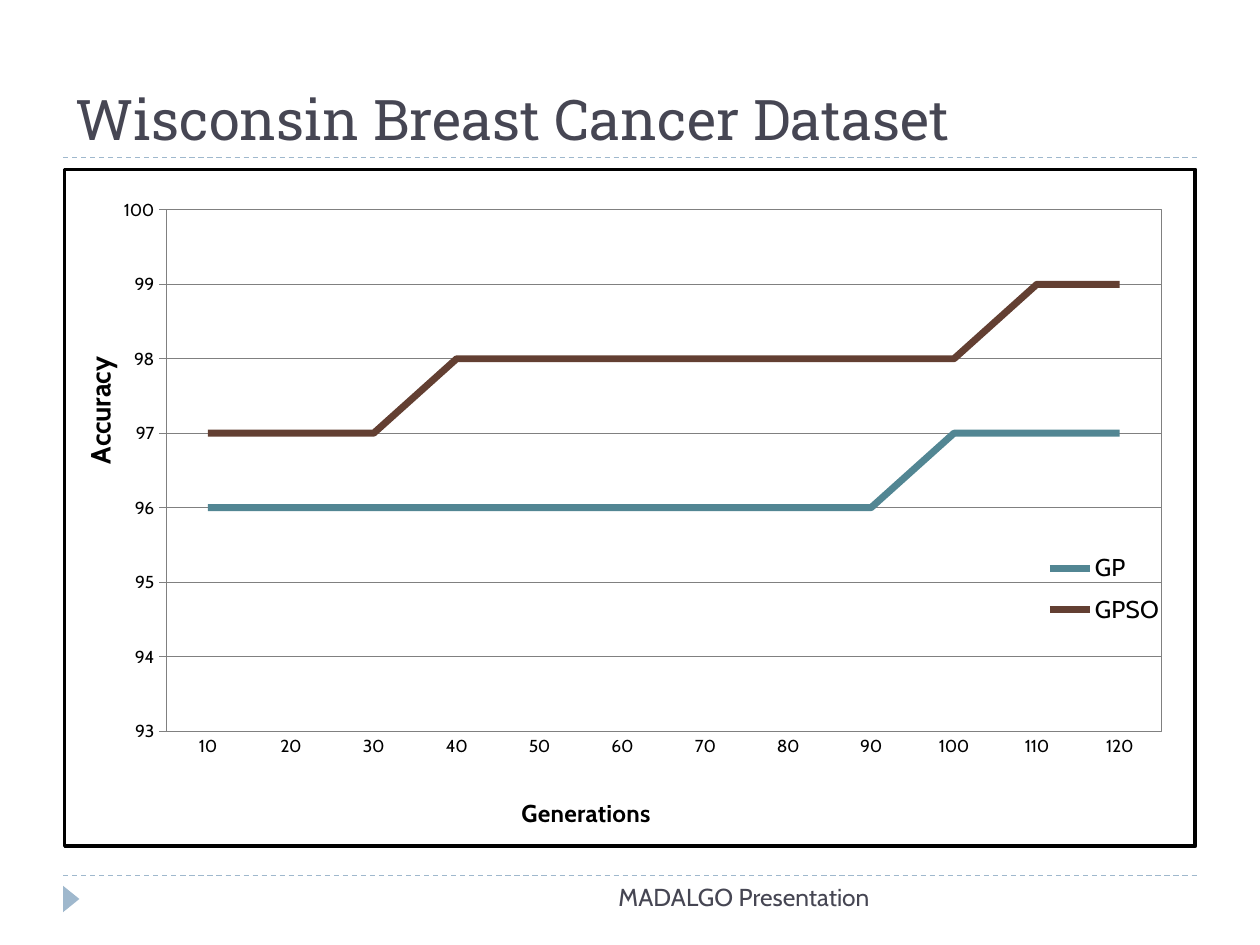
from dataclasses import dataclass
from lxml.etree import SubElement as Sub
from pptx import Presentation as Deck
from pptx.chart.data import CategoryChartData as Data
from pptx.dml.color import RGBColor as RGB
from pptx.enum.chart import XL_CHART_TYPE as Kind, XL_LEGEND_POSITION as Pos, XL_TICK_MARK as Tick
from pptx.enum.dml import MSO_LINE as Dash
from pptx.enum.shapes import MSO_CONNECTOR as Link, MSO_SHAPE as Form
from pptx.enum.text import MSO_ANCHOR as Anchor, PP_ALIGN as Align
from pptx.oxml import parse_xml
from pptx.oxml.ns import nsdecls, qn
from pptx.util import Inches, Pt


@dataclass(frozen=True)
class Theme:
    ink: str = "464653"
    sky: str = "9FB8CD"
    black: str = "000000"
    grid: str = "808080"
    teal: str = "528693"
    brown: str = "633F32"
    head: str = "Roboto Slab"
    body: str = "Cabin"
    title: int = 32
    large: int = 16
    mid: int = 14
    small: int = 10


class Page:
    def __init__(self, slide, theme):
        self.slide, self.theme = slide, theme

    def font(self, font, size, color, face, bold=False):
        font.size, font.name, font.bold = Pt(size), face, bold
        font.color.rgb = RGB.from_string(color)

    def stroke(self, line, color, width):
        line.color.rgb = RGB.from_string(color)
        line.width = Pt(width)

    def rule(self, y):
        left, right, top = Inches(0.5), Inches(9.5), Inches(y)
        line = self.slide.shapes.add_connector(Link.STRAIGHT, left, top, right, top)
        self.stroke(line.line, self.theme.sky, 0.75)
        line.line.dash_style = Dash.DASH
        Sub(line._element.spPr, qn("a:effectLst"))

    def mark(self, *box):
        shape = self.slide.shapes.add_shape(Form.ISOSCELES_TRIANGLE, *map(Inches, box))
        shape.rotation = 90
        shape.shadow.inherit = False
        shape.fill.solid()
        shape.fill.fore_color.rgb = RGB.from_string(self.theme.sky)
        shape.line.fill.background()

    def text(self, words, box, size, face, anchor=Anchor.TOP, align=Align.LEFT):
        frame = self.slide.shapes.add_textbox(*map(Inches, box)).text_frame
        frame.word_wrap = True
        frame.vertical_anchor = anchor
        para = frame.paragraphs[0]
        para.alignment = align
        run = para.add_run()
        run.text = words
        self.font(run.font, size, self.theme.ink, face)

    def place(self, node, index, **spots):
        for old in node.findall(qn("c:layout")):
            node.remove(old)
        layout = parse_xml(f"<c:layout {nsdecls('c')}/>")
        manual = Sub(layout, qn("c:manualLayout"))
        if index == 0:
            Sub(manual, qn("c:layoutTarget"), val="inner")
        for key in ("x", "y"):
            Sub(manual, qn(f"c:{key}Mode"), val="edge")
        for key, value in spots.items():
            Sub(manual, qn(f"c:{key}"), val=str(value))
        node.insert(index, layout)

    def frame(self, color, width, fill):
        return parse_xml(
            f"<c:spPr {nsdecls('c', 'a')}>{fill}<a:ln w='{Pt(width)}'>"
            f"<a:solidFill><a:srgbClr val='{color}'/></a:solidFill></a:ln></c:spPr>")

    def label(self, axis, words, size, x, y, turn=0):
        title = axis.axis_title
        run = title.text_frame.paragraphs[0].add_run()
        run.text = words
        self.font(run.font, size, self.theme.black, self.theme.body, True)
        node = title._element
        node.find(".//" + qn("a:bodyPr")).set("rot", str(turn * 60000))
        self.place(node, 1, x=x, y=y)

    def chart(self, box, cats, rows):
        theme = self.theme
        data = Data(number_format="0")
        data.categories = cats
        for name, _, values in rows:
            data.add_series(name, values)
        chart = self.slide.shapes.add_chart(Kind.LINE, *map(Inches, box), data).chart
        chart.has_title = False
        self.font(chart.font, theme.small, theme.black, theme.body)
        chart.plots[0].vary_by_categories = False
        for line, (_, color, _) in zip(chart.series, rows):
            line.smooth = False
            self.stroke(line.format.line, color, 4)

        across, up = chart.category_axis, chart.value_axis
        for part in (across, up, up.major_gridlines):
            self.stroke(part.format.line, theme.grid, 0.5)
        across.major_tick_mark = Tick.NONE
        up.major_tick_mark = Tick.OUTSIDE
        up.minimum_scale, up.maximum_scale, up.major_unit = 93, 100, 1
        up.tick_labels.number_format = "0"
        up.tick_labels.number_format_is_linked = False
        self.label(across, "Generations", theme.mid, 0.4, 0.92)
        self.label(up, "Accuracy", theme.large, 0.01, 0.27, -90)

        chart.has_legend = True
        key = chart.legend
        key.position = Pos.RIGHT
        key.include_in_layout = False
        self.font(key.font, theme.mid, theme.black, theme.body)
        self.place(key._element, 1, x=0.86, y=0.55, w=0.12, h=0.14)

        root = chart._chartSpace.find(qn("c:chart"))
        plot = root.find(qn("c:plotArea"))
        self.place(plot, 0, x=0.09, y=0.06, w=0.88, h=0.77)
        plot.append(self.frame(theme.grid, 0.5, "<a:noFill/>"))
        white = "<a:solidFill><a:srgbClr val='FFFFFF'/></a:solidFill>"
        root.addnext(self.frame(theme.black, 2, white))


def main():
    deck = Deck()
    deck.slide_width, deck.slide_height = Inches(10), Inches(7.5)
    theme = Theme()
    page = Page(deck.slides.add_slide(deck.slide_layouts[6]), theme)
    for y in (6.95, 1.25):
        page.rule(y)
    page.mark(0.46, 7.07, 0.21, 0.13)
    page.text("Wisconsin Breast Cancer Dataset", (0.5, 0.17, 9, 1.08),
              theme.title, theme.head, Anchor.BOTTOM)
    page.text("MADALGO Presentation", (3.17, 6.95, 3.83, 0.4),
              theme.mid, theme.body, align=Align.RIGHT)
    page.chart((0.5, 1.33, 9, 5.4), [str(n) for n in range(10, 121, 10)], [
        ("GP", theme.teal, [96] * 9 + [97] * 3),
        ("GPSO", theme.brown, [97] * 3 + [98] * 7 + [99] * 2),
    ])
    deck.save("out.pptx")


if __name__ == "__main__":
    main()
